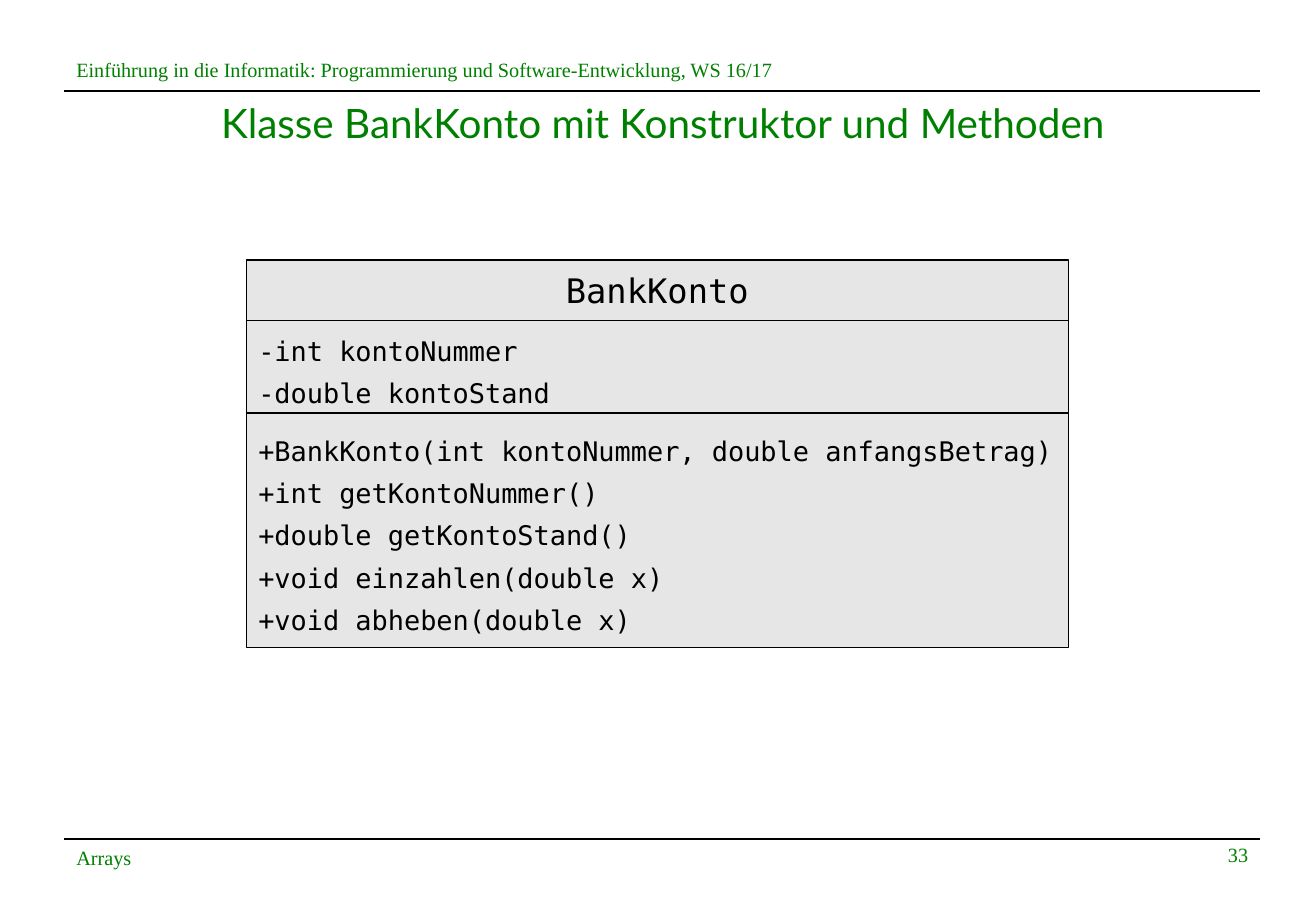
from pptx import Presentation
from pptx.dml.color import RGBColor
from pptx.enum.shapes import MSO_CONNECTOR as Conn, MSO_SHAPE as Form
from pptx.enum.text import MSO_ANCHOR as Anchor, PP_ALIGN as Align
from pptx.util import Emu, Pt
from lxml.etree import SubElement

SCALE = 9144  # EMU in one px, 100 px to the inch
WIDE, HIGH = 1084, 750
GREEN, BLACK, GREY = "008000", "000000", "E6E6E6"
SERIF, SANS, MONO = "Times New Roman", "Lato", "DejaVu Sans Mono"
EFFECT = "{http://schemas.openxmlformats.org/drawingml/2006/main}effectLst"


def px(num):
    return Emu(num * SCALE)


def tint(code):
    return RGBColor.from_string(code)


class Page:
    def __init__(self, slide):
        self.shapes = slide.shapes

    def rule(self, left, right, top):
        line = self.shapes.add_connector(
            Conn.STRAIGHT, px(left), px(top), px(right), px(top))
        line.line.color.rgb = tint(BLACK)
        line.line.width = Pt(1)
        SubElement(line._element.spPr, EFFECT)

    def letter(self, shape, lines, size, font, color, align, anchor, gap=None):
        """Fill a shape with one paragraph per line; gap is the line pitch in points."""
        frame = shape.text_frame
        frame.word_wrap = True
        frame.vertical_anchor = anchor
        frame.text = "\n".join(lines)
        for par in frame.paragraphs:
            par.alignment = align
            if gap:
                par.line_spacing = Pt(gap)
            for run in par.runs:
                run.font.size = Pt(size)
                run.font.name = font
                run.font.color.rgb = tint(color)

    def label(self, box, text, size=12, font=SERIF, align=Align.LEFT, anchor=Anchor.TOP):
        shape = self.shapes.add_textbox(*map(px, box))
        self.letter(shape, [text], size, font, GREEN, align, anchor)

    def panel(self, box, lines, size=16, align=Align.LEFT, gap=25):
        shape = self.shapes.add_shape(Form.RECTANGLE, *map(px, box))
        shape.shadow.inherit = False
        shape.fill.solid()
        shape.fill.fore_color.rgb = tint(GREY)
        shape.line.color.rgb = tint(BLACK)
        shape.line.width = Pt(0)
        self.letter(shape, lines, size, MONO, BLACK, align, Anchor.MIDDLE, gap)


def main():
    deck = Presentation()
    deck.slide_width, deck.slide_height = px(WIDE), px(HIGH)
    page = Page(deck.slides.add_slide(deck.slide_layouts[6]))

    for top in (75, 691):
        page.rule(53, 1038, top)
    page.label((53, 42, 611, 31),
               "Einführung in die Informatik: Programmierung und Software-Entwicklung, WS 16/17")
    page.label((54, 76, 984, 55), "Klasse BankKonto mit Konstruktor und Methoden",
               24, SANS, Align.CENTER)
    page.label((53, 692, 355, 29), "Arrays", anchor=Anchor.BOTTOM)
    page.label((778, 666, 260, 52), "33", align=Align.RIGHT, anchor=Anchor.BOTTOM)

    left, width = 203, 677
    fields = ["-int kontoNummer", "-double kontoStand"]
    methods = [
        "+BankKonto(int kontoNummer, double anfangsBetrag)",
        "+int getKontoNummer()",
        "+double getKontoStand()",
        "+void einzahlen(double x)",
        "+void abheben(double x)",
    ]
    page.panel((left, 214, width, 50), ["BankKonto"], 20, Align.CENTER, None)
    page.panel((left, 264, width, 76), fields)
    page.panel((left, 340, width, 193), methods)
    deck.save("out.pptx")


if __name__ == "__main__":
    main()
